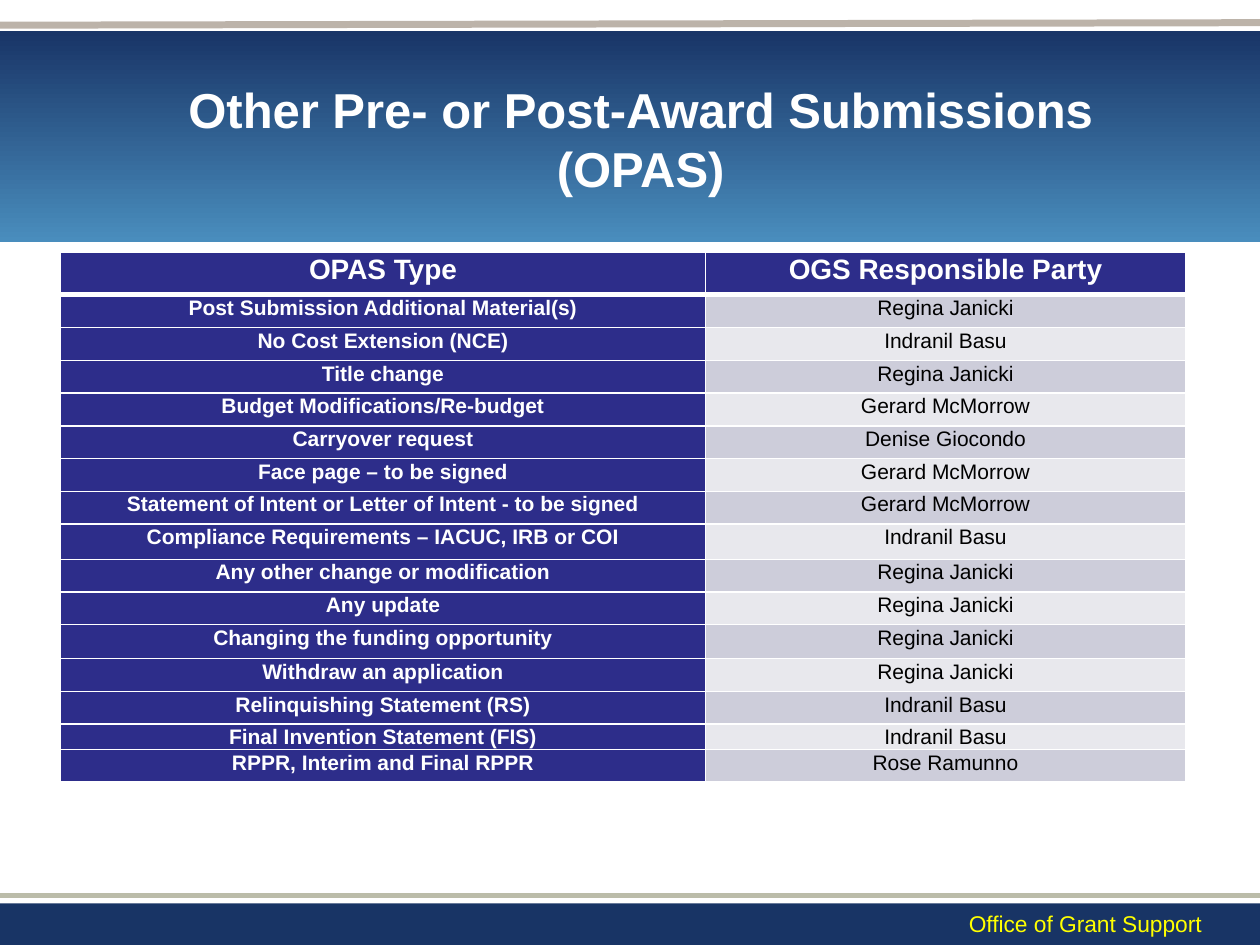
from typing import NamedTuple

from lxml import etree
from pptx import Presentation
from pptx.dml.color import RGBColor
from pptx.enum.shapes import MSO_CONNECTOR, MSO_SHAPE
from pptx.enum.text import MSO_ANCHOR, MSO_AUTO_SIZE, PP_ALIGN
from pptx.oxml.ns import qn
from pptx.util import Inches, Pt

RECT = MSO_SHAPE.RECTANGLE
STRAIGHT = MSO_CONNECTOR.STRAIGHT
CENTER = PP_ALIGN.CENTER
MIDDLE = MSO_ANCHOR.MIDDLE

FONT = "Arial"
WHITE, BLACK, YELLOW = "FFFFFF", "000000", "FFFF00"
NAVY, INDIGO = "183465", "2D2D8A"
BANDS = ("CDCDDA", "E8E8ED")


class Rule(NamedTuple):
    y1: float
    y2: float
    color: str
    width: float


class Submission(NamedTuple):
    kind: str
    party: str
    height: float = 0.26


RULES = [Rule(7.11, 7.11, "BBBCA9", 3), Rule(0.2, 0.18, "BCB3A9", 4)]
HEADER = Submission("OPAS Type", "OGS Responsible Party", 0.34)
SUBMISSIONS = [
    Submission("Post Submission Additional Material(s)", "Regina Janicki"),
    Submission("No Cost Extension (NCE)", "Indranil Basu"),
    Submission("Title change", "Regina Janicki"),
    Submission("Budget Modifications/Re-budget", "Gerard McMorrow"),
    Submission("Carryover request", "Denise Giocondo"),
    Submission("Face page – to be signed", "Gerard McMorrow"),
    Submission("Statement of Intent or Letter of Intent - to be signed", "Gerard McMorrow"),
    Submission("Compliance Requirements – IACUC, IRB or COI", "Indranil Basu", 0.28),
    Submission("Any other change or modification", "Regina Janicki"),
    Submission("Any update", "Regina Janicki"),
    Submission("Changing the funding opportunity", "Regina Janicki", 0.27),
    Submission("Withdraw an application", "Regina Janicki"),
    Submission("Relinquishing Statement (RS)", "Indranil Basu"),
    Submission("Final Invention Statement (FIS)", "Indranil Basu", 0.2),
    Submission("RPPR, Interim and Final RPPR", "Rose Ramunno"),
]


def rgb(color: str) -> RGBColor:
    return RGBColor.from_string(color)


def set_font(p, size: float, color: str, bold: bool = False) -> None:
    f = p.font
    f.name, f.size, f.bold = FONT, Pt(size), bold
    f.color.rgb = rgb(color)


def add_bar(s, top: float, height: float):
    sp = s.shapes.add_shape(RECT, 0, Inches(top), Inches(10), Inches(height))
    sp.shadow.inherit = False
    sp.line.fill.background()
    return sp


def add_rule(s, rule: Rule) -> None:
    cx = s.shapes.add_connector(STRAIGHT, 0, Inches(rule.y1), Inches(10), Inches(rule.y2))
    cx.line.color.rgb = rgb(rule.color)
    cx.line.width = Pt(rule.width)
    etree.SubElement(cx._element.spPr, qn("a:effectLst"))


def set_borders(cell, top: float, bottom: float) -> None:
    tcPr = cell._tc.get_or_add_tcPr()
    for side, width in (("L", 1), ("R", 1), ("T", top), ("B", bottom)):
        ln = etree.SubElement(tcPr, qn(f"a:ln{side}"), w=str(Pt(width)))
        fill = etree.SubElement(ln, qn("a:solidFill"))
        etree.SubElement(fill, qn("a:srgbClr"), val=WHITE)


def fill_cell(cell, text: str, fill: str, size: float, color: str, bold: bool) -> None:
    cell.margin_left = cell.margin_right = Inches(0.06)
    cell.margin_top = cell.margin_bottom = 0
    cell.fill.solid()
    cell.fill.fore_color.rgb = rgb(fill)
    p = cell.text_frame.paragraphs[0]
    p.text = text
    p.alignment = CENTER
    p.line_spacing = 1.07
    set_font(p, size, color, bold)


def add_submissions(s) -> None:
    rows = [HEADER, *SUBMISSIONS]
    table = s.shapes.add_table(len(rows), 2, Inches(0.48), Inches(2),
                               Inches(8.93), Inches(4.19)).table
    table.columns[0].width = Inches(5.12)
    table.columns[1].width = Inches(3.81)
    for i, row in enumerate(rows):
        table.rows[i].height = Inches(row.height)
        for j, text in enumerate((row.kind, row.party)):
            cell = table.cell(i, j)
            # The heavy line runs between the header and the first row
            set_borders(cell, 3 if i == 1 else 1, 3 if i == 0 else 1)
            strong = i == 0 or j == 0
            fill_cell(cell, text, INDIGO if strong else BANDS[(i - 1) % 2],
                      16 if i == 0 else 12, WHITE if strong else BLACK, strong)


def main() -> None:
    prs = Presentation()
    prs.slide_width, prs.slide_height = Inches(10), Inches(7.5)
    s = prs.slides.add_slide(prs.slide_layouts[5])

    # Footer bar, title band and rules
    footer = add_bar(s, 7.17, 0.33)
    footer.fill.solid()
    footer.fill.fore_color.rgb = rgb(NAVY)
    band = add_bar(s, 0.25, 1.67)
    band.fill.gradient()
    band.fill.gradient_angle = 270
    for stop, color, position in zip(band.fill.gradient_stops, ("193567", "498DBD"), (0, 1)):
        stop.color.rgb = rgb(color)
        stop.position = position
    for rule in RULES:
        add_rule(s, rule)

    # Title, brought in front of the band
    title = s.shapes.title
    s.shapes._spTree.append(title._element)
    title.left, title.top = Inches(0.75), Inches(0.54)
    title.width, title.height = Inches(8.67), Inches(1.12)
    tf = title.text_frame
    tf.text = "Other Pre- or Post-Award Submissions (OPAS)"
    tf.word_wrap = True
    tf.auto_size = MSO_AUTO_SIZE.NONE
    tf.vertical_anchor = MIDDLE
    tf.paragraphs[0].alignment = CENTER
    set_font(tf.paragraphs[0], 28, WHITE, True)

    add_submissions(s)

    # Office name in the footer
    tf = s.shapes.add_textbox(Inches(7.59), Inches(7.17), Inches(2.08), Inches(0.32)).text_frame
    tf.word_wrap = False
    tf.auto_size = MSO_AUTO_SIZE.SHAPE_TO_FIT_TEXT
    tf.text = "Office of Grant Support"
    set_font(tf.paragraphs[0], 13, YELLOW)

    prs.save("out.pptx")


if __name__ == "__main__":
    main()
